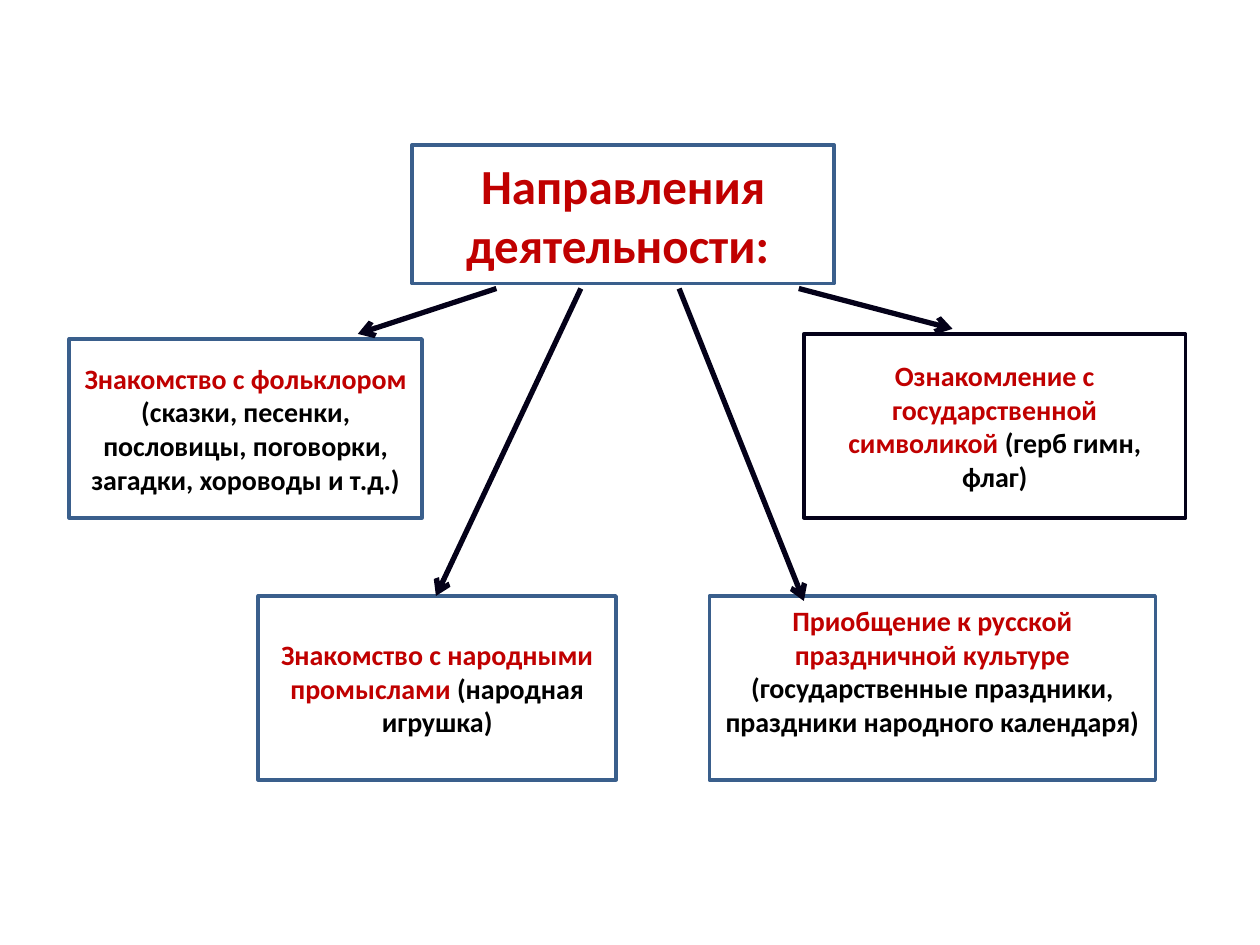
from lxml.etree import SubElement
from pptx import Presentation
from pptx.dml.color import RGBColor
from pptx.enum.shapes import MSO_CONNECTOR as Connector, MSO_SHAPE as Shape
from pptx.enum.text import MSO_ANCHOR as Anchor, PP_ALIGN as Align
from pptx.oxml.ns import qn
from pptx.util import Inches, Pt

# Grid of 100 columns by 75 rows
WIDTH, HEIGHT = Inches(10), Inches(7.5)
COLUMN, ROW = WIDTH / 100, HEIGHT / 75

RED, BLACK, WHITE = "C00000", "000000", "FFFFFF"
BLUE, NAVY = "3A5F8C", "040119"

TOPIC_SIZE = 16
UPPER_BOTTOM, LOWER_TOP, LOWER_HEIGHT = 41.1, 47.3, 14.6
ARROW_TOP = 22.9

# Left, top, width, height, border, topic, details, bottom margin in inches
DIRECTIONS = [
    (5.5, 26.9, 28, UPPER_BOTTOM - 26.9, BLUE, "Знакомство с фольклором ",
     "(сказки, песенки, пословицы, поговорки, загадки, хороводы и т.д.)", 0.05),
    (20.5, LOWER_TOP, 28.4, LOWER_HEIGHT, BLUE,
     "Знакомство с народными промыслами ", "(народная игрушка)", 0.05),
    (56.3, LOWER_TOP, 35.4, LOWER_HEIGHT, BLUE,
     "Приобщение к русской праздничной культуре ",
     "(государственные праздники, праздники народного календаря)", 0.32),
    (63.8, 26.5, 30.3, UPPER_BOTTOM - 26.5, NAVY,
     "Ознакомление с государственной символикой ", "(герб гимн, флаг)", 0.05),
]

# Start column, end column, end row
ARROWS = [(39.4, 28.4, 26.5), (46.1, 34.6, 47.3),
          (53.9, 63.8, 47.7), (63.4, 75.6, 26.1)]


def color(value):
    return RGBColor.from_string(value)


def x(columns):
    return round(columns * COLUMN)


def y(rows):
    return round(rows * ROW)


def add_box(slide, left, top, width, height, border, parts, size, bottom=0.05):
    """Draw a bordered box holding one centred paragraph of coloured parts."""
    box = slide.shapes.add_shape(Shape.RECTANGLE, x(left), y(top), x(width), y(height))
    box.shadow.inherit = False
    box.fill.solid()
    box.fill.fore_color.rgb = color(WHITE)
    box.line.color.rgb = color(border)
    box.line.width = Pt(2)

    frame = box.text_frame
    frame.word_wrap = True
    frame.vertical_anchor = Anchor.MIDDLE
    frame.margin_bottom = Inches(bottom)
    paragraph = frame.paragraphs[0]
    paragraph.alignment = Align.CENTER
    paragraph.font.name = "Calibri"
    paragraph.font.size = Pt(size)
    paragraph.font.bold = True
    for text, text_color in parts:
        run = paragraph.add_run()
        run.text = text
        run.font.color.rgb = color(text_color)


def add_arrow(slide, start_column, end_column, end_row):
    """Draw an arrow down from the heading."""
    arrow = slide.shapes.add_connector(
        Connector.STRAIGHT, x(start_column), y(ARROW_TOP), x(end_column), y(end_row))
    arrow.line.color.rgb = color(NAVY)
    arrow.line.width = Pt(3)
    properties = arrow._element.spPr
    SubElement(properties.find(qn("a:ln")), qn("a:tailEnd"), type="arrow")
    SubElement(properties, qn("a:effectLst"))


def main():
    presentation = Presentation()
    presentation.slide_width, presentation.slide_height = WIDTH, HEIGHT
    slide = presentation.slides.add_slide(presentation.slide_layouts[6])

    # Heading
    add_box(slide, 32.7, 11.5, 33.5, 11, BLUE,
            [("Направления деятельности: ", RED)], 28)

    # Directions of work
    for left, top, width, height, border, topic, details, bottom in DIRECTIONS:
        add_box(slide, left, top, width, height, border,
                [(topic, RED), (details, BLACK)], TOPIC_SIZE, bottom)

    # Arrows from the heading to the directions
    for arrow in ARROWS:
        add_arrow(slide, *arrow)

    presentation.save("out.pptx")


if __name__ == "__main__":
    main()
